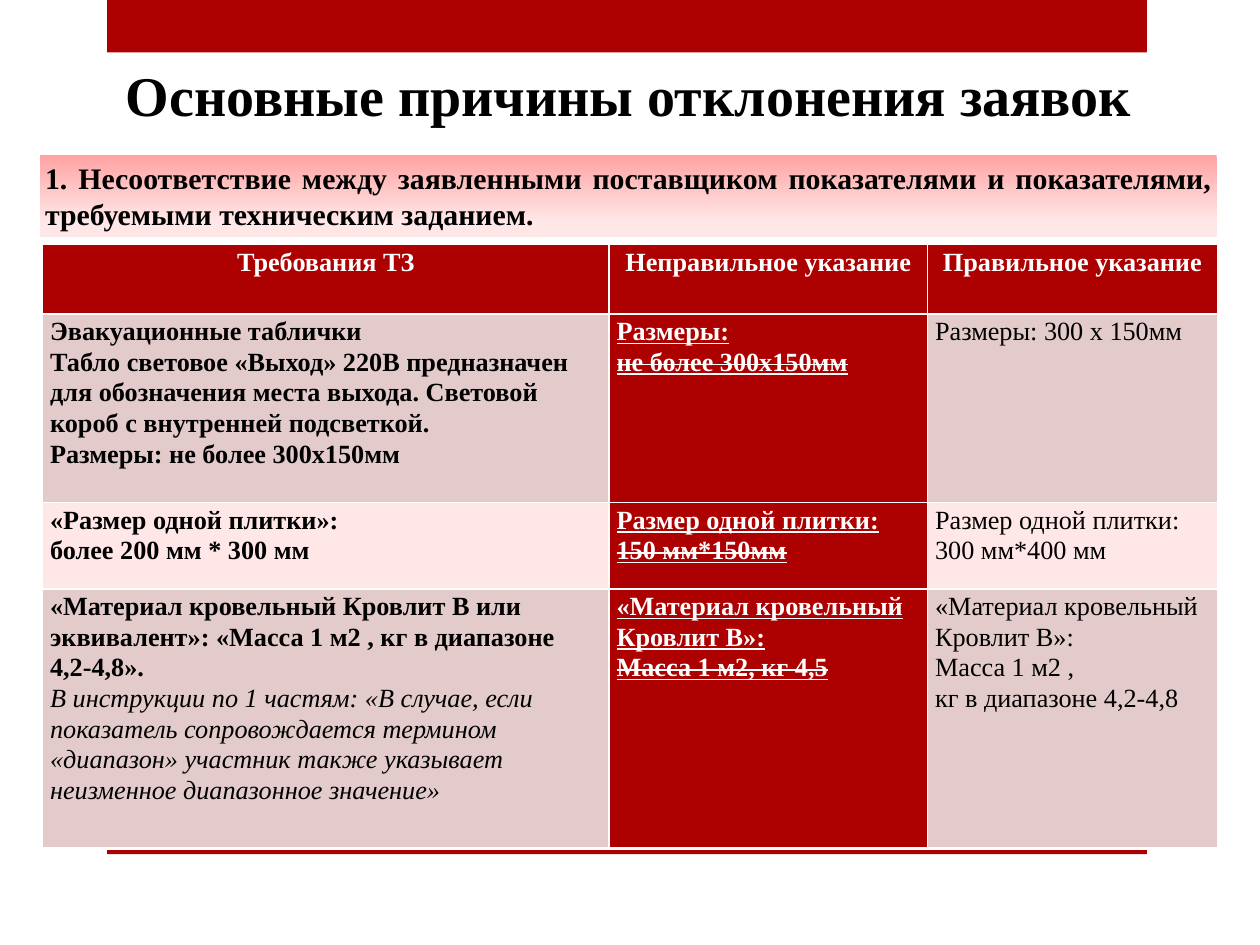
import pptx
import pptx.util
import pptx.dml.color
import pptx.enum.shapes
import pptx.enum.text

Cm = pptx.util.Cm
ALIGN = pptx.enum.text.PP_ALIGN
ANCHOR = pptx.enum.text.MSO_ANCHOR
RECTANGLE = pptx.enum.shapes.MSO_SHAPE.RECTANGLE
RED = "AD0101"
ROSE = "E3CBCB"
PINK = "FFE7E7"
BLACK = "000000"
WHITE = "FFFFFF"


def color(value):
    return pptx.dml.color.RGBColor.from_string(value)


def write(frame, text, size=15, ink=BLACK, bold=True, italic=False,
          underline=False, strike=False, align=ALIGN.LEFT, spacing=1.0):
    para = frame.paragraphs[0]
    if para.runs:
        para = frame.add_paragraph()
    para.alignment = align
    para.line_spacing = spacing
    para.space_before = para.space_after = pptx.util.Pt(0)
    span = para.add_run()
    span.text = text
    span.font.name = "Times New Roman"
    span.font.size = pptx.util.Pt(size)
    span.font.color.rgb = color(ink)
    span.font.bold = bold
    span.font.italic = italic
    span.font.underline = underline
    if strike:
        span._r.get_or_add_rPr().set("strike", "sngStrike")


deck = pptx.Presentation()
deck.slide_width = Cm(25.4)
deck.slide_height = Cm(19.05)
page = deck.slides.add_slide(deck.slide_layouts[5])

for top, height in [(0, 1.06), (17.14, 0.08)]:
    bar = page.shapes.add_shape(RECTANGLE, Cm(2.16), Cm(top), Cm(20.96), Cm(height))
    bar.shadow.inherit = False
    bar.fill.solid()
    bar.fill.fore_color.rgb = color(RED)
    bar.line.fill.background()

title = page.shapes.title
title.left, title.top, title.width, title.height = Cm(2.29), Cm(1.12), Cm(20.78), Cm(1.57)
write(title.text_frame, "Основные причины отклонения заявок", size=32, align=ALIGN.CENTER)

reason = page.shapes.add_shape(RECTANGLE, Cm(0.81), Cm(3.12), Cm(23.72), Cm(1.66))
reason.shadow.inherit = False
reason.line.fill.background()
reason.fill.gradient()
reason.fill.gradient_angle = 270
for stop, (position, value) in zip(reason.fill.gradient_stops, [(0, "FFA3A3"), (0.82, PINK)]):
    stop.position = position
    stop.color.rgb = color(value)
write(reason.text_frame, "1. Несоответствие между заявленными поставщиком показателями "
      "и показателями, требуемыми техническим заданием.", size=17, align=ALIGN.JUSTIFY)

for box in (title, reason):
    frame = box.text_frame
    frame.word_wrap = True
    frame.vertical_anchor = ANCHOR.MIDDLE
    frame.margin_left = frame.margin_right = frame.margin_top = frame.margin_bottom = Cm(0.1)

headings = ["Требования ТЗ", "Неправильное указание", "Правильное указание"]
examples = [
    (["Эвакуационные таблички",
      "Табло световое «Выход» 220В предназначен для обозначения места выхода. "
      "Световой короб с внутренней подсветкой.",
      "Размеры: не более 300х150мм"],
     ["Размеры:", "не более 300х150мм"],
     ["Размеры: 300 х 150мм"]),
    (["«Размер одной плитки»:", "более 200 мм * 300 мм"],
     ["Размер одной плитки:", "150 мм*150мм"],
     ["Размер одной плитки: 300 мм*400 мм"]),
    (["«Материал кровельный Кровлит В или эквивалент»: "
      "«Масса 1 м2 , кг в диапазоне 4,2-4,8».",
      "В инструкции по 1 частям: «В случае, если показатель сопровождается термином "
      "«диапазон» участник также указывает неизменное диапазонное значение»"],
     ["«Материал кровельный Кровлит В»:", "Масса 1 м2, кг 4,5"],
     ["«Материал кровельный Кровлит В»:", "Масса 1 м2 ,", "кг в диапазоне 4,2-4,8"]),
]

widths = [11.42, 6.42, 5.84]
heights = [1.4, 3.8, 1.74, 5.22]
table = page.shapes.add_table(len(heights), len(widths), Cm(0.86), Cm(4.93),
                              Cm(sum(widths)), Cm(sum(heights))).table
for column, width in zip(table.columns, widths):
    column.width = Cm(width)
for row, height in zip(table.rows, heights):
    row.height = Cm(height)
for cell in table.iter_cells():
    cell.margin_left = cell.margin_right = Cm(0.15)
    cell.margin_top = Cm(0.03)
    cell.margin_bottom = Cm(0)
    cell.fill.solid()
    cell.fill.fore_color.rgb = color(RED)

for column, heading in enumerate(headings):
    write(table.cell(0, column).text_frame, heading, ink=WHITE, align=ALIGN.CENTER, spacing=1.06)

for row, (required, wrong, right) in enumerate(examples, start=1):
    for column in (0, 2):
        table.cell(row, column).fill.fore_color.rgb = color(PINK if row == 2 else ROSE)
    for line in required:
        note = line.startswith("В инструкции")
        write(table.cell(row, 0).text_frame, line, bold=not note, italic=note, spacing=1.06)
    for line in wrong:
        write(table.cell(row, 1).text_frame, line, ink=WHITE, underline=True,
              strike=line == wrong[-1], spacing=1.06)
    for line in right:
        write(table.cell(row, 2).text_frame, line, bold=False, spacing=1.06)

deck.save("out.pptx")
